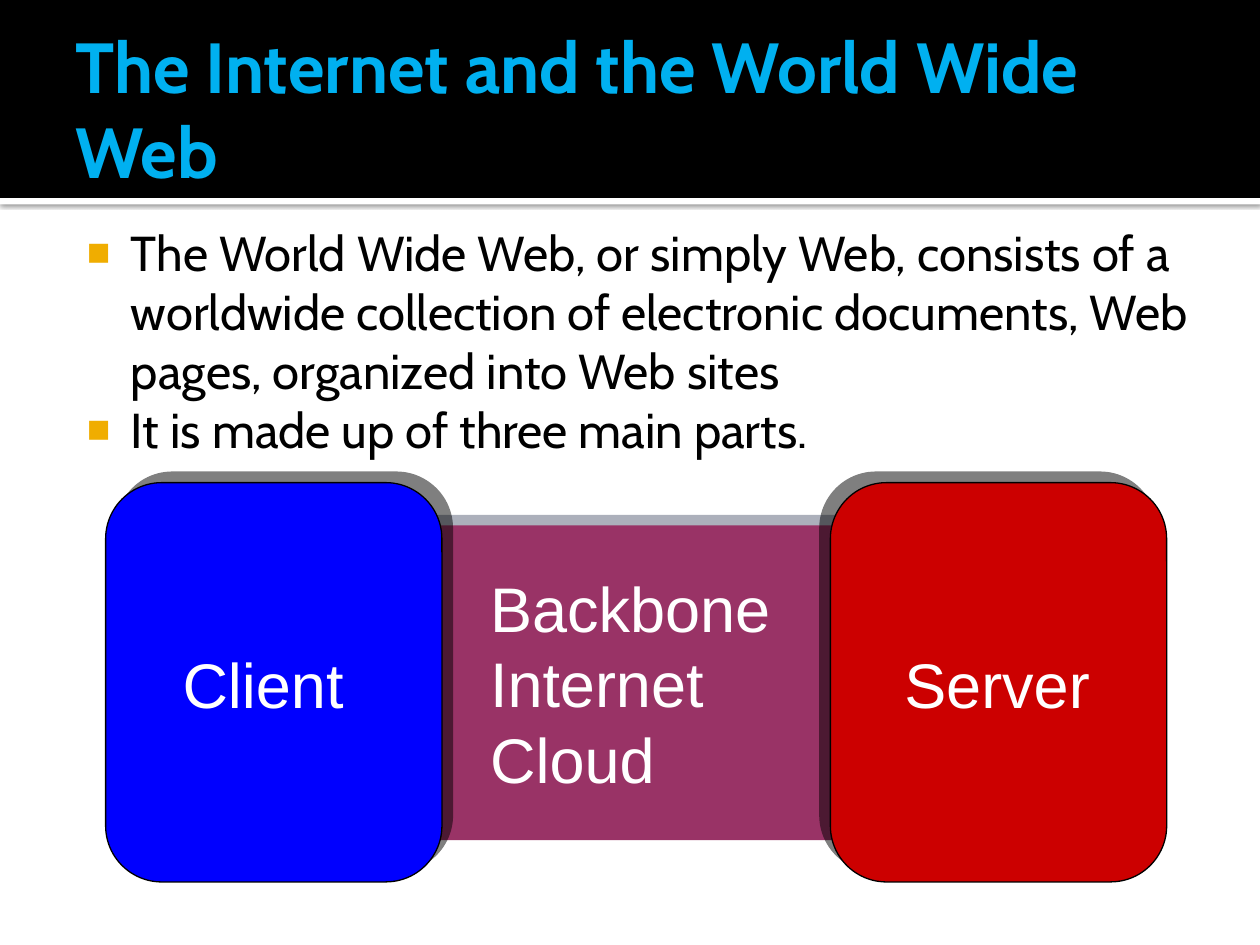
import lxml.etree
import pptx
import pptx.dml.color
import pptx.enum.shapes
import pptx.enum.text
import pptx.oxml.ns
import pptx.util

Cm = pptx.util.Cm
Pt = pptx.util.Pt
SHAPE = pptx.enum.shapes.MSO_SHAPE
ANCHOR = pptx.enum.text.MSO_ANCHOR


def colour(value):
    return pptx.dml.color.RGBColor.from_string(value)


def add_child(parent, tag, **attributes):
    child = lxml.etree.SubElement(parent, pptx.oxml.ns.qn(tag))
    for name, value in attributes.items():
        child.set(name, str(value))
    return child


def add_shadow(shape, shade, opacity, blur, distance, angle):
    effects = shape._element.spPr.find(pptx.oxml.ns.qn("a:effectLst"))
    shadow = add_child(effects, "a:outerShdw", blurRad=Pt(blur), dist=Pt(distance),
                       dir=angle * 60000, algn="ctr", rotWithShape=0)
    tint = add_child(shadow, "a:srgbClr", val=shade)
    add_child(tint, "a:alpha", val=opacity * 1000)


def add_block(shapes, kind, place, fill, outline=None, shadow=None):
    block = shapes.add_shape(kind, *map(Cm, place))
    block.shadow.inherit = False
    block.fill.solid()
    block.fill.fore_color.rgb = colour(fill)
    if outline:
        block.line.color.rgb = colour(outline)
        block.line.width = Pt(0.75)
    else:
        block.line.fill.background()
    if shadow:
        add_shadow(block, *shadow)
    return block


def add_text(shapes, place, lines, font, size, ink, bold=False, wrap=True):
    box = shapes.add_textbox(*map(Cm, place))
    frame = box.text_frame
    frame.word_wrap = wrap
    frame.text = "\n".join(lines)
    for para in frame.paragraphs:
        para.font.name = font
        para.font.size = Pt(size)
        para.font.bold = bold
        para.font.color.rgb = colour(ink)
    return frame


def set_bullet(para):
    properties = para._p.get_or_add_pPr()
    properties.set("marL", str(Cm(1.22)))
    properties.set("indent", str(-Cm(0.89)))
    # Bullet elements must precede the default run properties
    bullet = [lxml.etree.Element(pptx.oxml.ns.qn(tag))
              for tag in ("a:buClr", "a:buSzPct", "a:buFont", "a:buChar")]
    add_child(bullet[0], "a:srgbClr", val="F0AD00")
    bullet[1].set("val", "80000")
    bullet[2].set("typeface", "Arial")
    bullet[3].set("char", "■")
    for position, element in enumerate(bullet):
        properties.insert(position, element)


def add_part(page, kind, place, fill, label_place, lines, outline, shadow):
    """A labelled part of the Web, grouped with its label."""
    group = page.shapes.add_group_shape()
    block = add_block(group.shapes, kind, place, fill, outline, shadow)
    if kind == SHAPE.ROUNDED_RECTANGLE:
        block.adjustments[0] = 0.167
    frame = add_text(group.shapes, label_place, lines, "Arial", 36, "FFFFFF", wrap=False)
    frame.auto_size = pptx.enum.text.MSO_AUTO_SIZE.SHAPE_TO_FIT_TEXT


def main():
    deck = pptx.Presentation()
    deck.slide_width, deck.slide_height = Cm(25.4), Cm(19.05)
    page = deck.slides.add_slide(deck.slide_layouts[6])

    # Header band with a shadowed white strip below
    add_block(page.shapes, SHAPE.RECTANGLE, (0, 3.99, 25.4, 0.13), "FFFFFF",
              shadow=("000000", 60, 2.5, 0.8, 90))
    add_block(page.shapes, SHAPE.RECTANGLE, (0, 0, 25.4, 3.99), "000000")

    # Title
    title = add_text(page.shapes, (1.27, 0.43, 22.86, 3.48),
                     ["The Internet and the World Wide Web"],
                     "Cabin", 40.5, "00B0F0", bold=True)
    title.vertical_anchor = ANCHOR.MIDDLE
    title.margin_right = Cm(0.13)

    # Bulleted text
    body = add_text(page.shapes, (1.27, 4.24, 23.5, 5.28),
                    ["The World Wide Web, or simply Web, consists of a worldwide collection "
                     "of electronic documents, Web pages, organized into Web sites",
                     "It is made up of three main parts."],
                    "Cabin", 28, "000000")
    body.margin_left, body.margin_top = Cm(0.15), Cm(0.25)
    for para in body.paragraphs:
        set_bullet(para)

    # The three parts: backbone behind, client and server in front
    add_part(page, SHAPE.RECTANGLE, (8.48, 10.59, 8.46, 6.35), "993366",
             (9.63, 11.35, 6.15, 4.83), ["Backbone", "Internet", "Cloud"],
             None, ("5A6378", 50, 0, 8.5, 315))
    for name, left, fill, label_left, label_width, angle in (
            ("Client", 2.13, "0000FF", 3.43, 3.76, 315),
            ("Server", 16.74, "CC0000", 17.98, 4.24, 225)):
        add_part(page, SHAPE.ROUNDED_RECTANGLE, (left, 9.73, 6.78, 8.05), fill,
                 (label_left, 12.88, label_width, 1.78), [name],
                 "000000", ("000000", 50, 0, 8.5, angle))

    deck.save("out.pptx")


if __name__ == "__main__":
    main()
